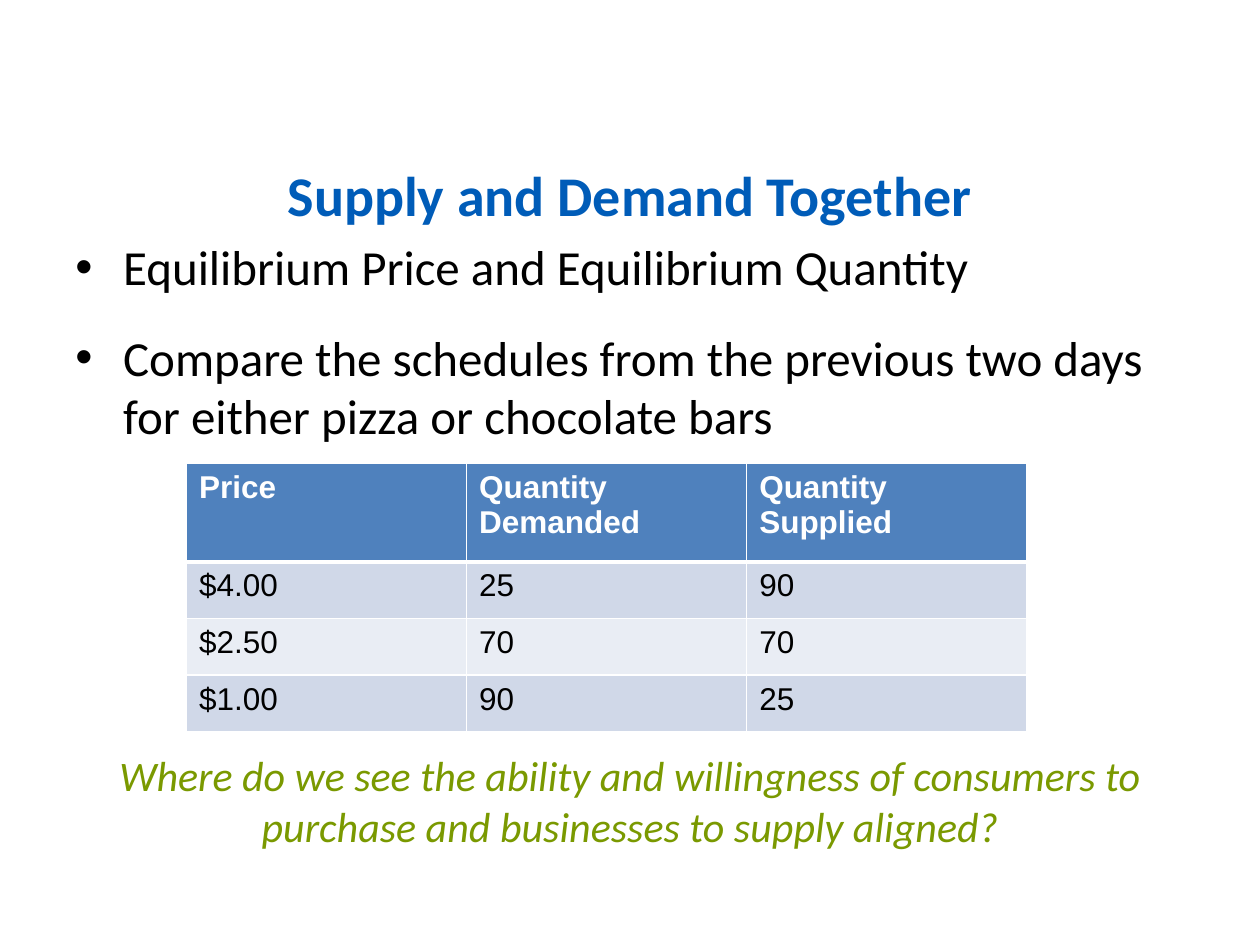
from lxml.etree import SubElement
from pptx import Presentation
from pptx.dml.color import RGBColor
from pptx.enum.text import MSO_ANCHOR, PP_ALIGN
from pptx.oxml.ns import qn
from pptx.util import Inches, Pt

COLORS = {
    "title": "005CB8", "text": "000000", "question": "7A9900",
    "header": "4F81BD", "band_dark": "D0D8E8", "band_light": "E9EDF4",
    "white": "FFFFFF",
}
BULLETS = [
    "Equilibrium Price and Equilibrium Quantity",
    "Compare the schedules from the previous two days for either pizza or chocolate bars",
]
QUESTION = ("Where do we see the ability and willingness of consumers to "
            "purchase and businesses to supply aligned?")
SCHEDULE = [
    ["Price", "Quantity Demanded", "Quantity Supplied"],
    ["$4.00", "25", "90"],
    ["$2.50", "70", "70"],
    ["$1.00", "90", "25"],
]


def rgb(name):
    return RGBColor.from_string(COLORS[name])


def add_run(p, text, size, color, font="Calibri", bold=False, italic=False):
    r = p.add_run()
    r.text = text
    r.font.name, r.font.size = font, Pt(size)
    r.font.bold, r.font.italic = bold, italic
    r.font.color.rgb = rgb(color)


def add_title(slide, left, top, width, height):
    sp = slide.shapes.title
    sp.left, sp.top, sp.width, sp.height = map(Inches, (left, top, width, height))
    tf = sp.text_frame
    tf.vertical_anchor = MSO_ANCHOR.MIDDLE
    p = tf.paragraphs[0]
    p.alignment = PP_ALIGN.CENTER
    p.line_spacing = Pt(57)
    add_run(p, "Supply and Demand Together", 32, "title", bold=True)


def add_text_frame(slide, left, top, width, height):
    tf = slide.shapes.add_textbox(*map(Inches, (left, top, width, height))).text_frame
    tf.word_wrap = True
    return tf


def add_bullets(slide, left, top, width, height):
    tf = add_text_frame(slide, left, top, width, height)
    for i, text in enumerate(BULLETS):
        p = tf.add_paragraph() if i else tf.paragraphs[0]
        p_pr = p._p.get_or_add_pPr()
        p_pr.set("marL", str(Inches(0.38)))
        p_pr.set("indent", str(-Inches(0.38)))
        SubElement(p_pr, qn("a:buFont"), typeface="Arial")
        SubElement(p_pr, qn("a:buChar"), char="•")
        p.space_after = Pt(18)
        add_run(p, text, 28, "text")


def add_question(slide, left, top, width, height):
    p = add_text_frame(slide, left, top, width, height).paragraphs[0]
    p.alignment = PP_ALIGN.CENTER
    add_run(p, QUESTION, 24, "question", italic=True)


def set_borders(cell, top, bottom):
    """Draw white cell borders, with top and bottom widths in points."""
    tc_pr = cell._tc.get_or_add_tcPr()
    for side, width in (("L", 1), ("R", 1), ("T", top), ("B", bottom)):
        ln = SubElement(tc_pr, qn(f"a:ln{side}"), w=str(Pt(width)))
        fill = SubElement(ln, qn("a:solidFill"))
        SubElement(fill, qn("a:srgbClr"), val=COLORS["white"])


def add_schedule(slide, left, top, width, height, header_height=0.78):
    rows, cols = len(SCHEDULE), len(SCHEDULE[0])
    table = slide.shapes.add_table(
        rows, cols, *map(Inches, (left, top, width, height))).table
    for column in table.columns:
        column.width = Inches(width / cols)
    for i, values in enumerate(SCHEDULE):
        is_header = i == 0
        row_height = header_height if is_header else (height - header_height) / (rows - 1)
        table.rows[i].height = Inches(row_height)
        band = "header" if is_header else "band_dark" if i % 2 else "band_light"
        for j, value in enumerate(values):
            cell = table.cell(i, j)
            set_borders(cell, 3 if i == 1 else 1, 3 if is_header else 1)
            cell.fill.solid()
            cell.fill.fore_color.rgb = rgb(band)
            add_run(cell.text_frame.paragraphs[0], value, 18,
                    "white" if is_header else "text", "Arial", bold=is_header)


def main():
    prs = Presentation()
    prs.slide_width, prs.slide_height = Inches(10), Inches(7.5)
    slide = prs.slides.add_slide(prs.slide_layouts[5])
    add_title(slide, 0.5, 1, 9, 0.83)
    add_bullets(slide, 0.5, 1.83, 9, 1.8)
    add_schedule(slide, 1.48, 3.68, 6.67, 2.13)
    add_question(slide, 0.5, 5.9, 9, 0.95)
    prs.save("out.pptx")


if __name__ == "__main__":
    main()
